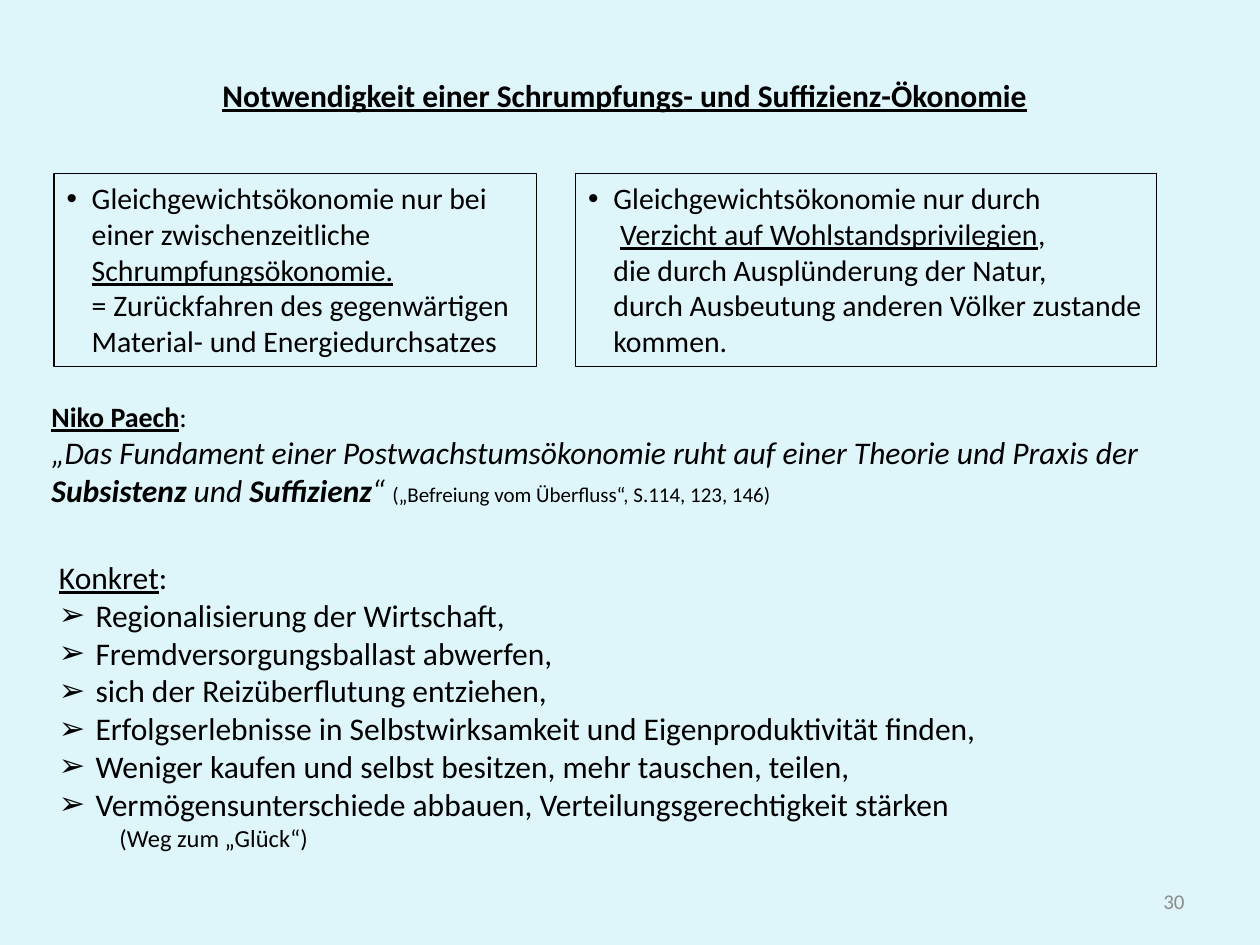
import pptx
import pptx.util
import pptx.dml.color
import pptx.enum.shapes
import pptx.enum.text
import pptx.oxml.ns
import lxml.etree

ALIGN = pptx.enum.text.PP_ALIGN
ANCHOR = pptx.enum.text.MSO_ANCHOR

SLIDE_W, SLIDE_H = 10, 7.5
BACKGROUND, INK, GREY = "DEF5FA", "000000", "8C8C8C"
FONT = "Calibri"

# Content: a paragraph is a list of (text, format) runs
TITLE = [[("Notwendigkeit einer Schrumpfungs- und Suffizienz-Ökonomie",
           {"bold": True, "underline": True})]]

SHRINKING = [[
    ("Gleichgewichtsökonomie nur bei einer zwischenzeitliche ", {}),
    ("Schrumpfungsökonomie.", {"underline": True}),
    ("\n= Zurückfahren des gegenwärtigen Material- und Energiedurchsatzes", {}),
]]

RENUNCIATION = [[
    ("Gleichgewichtsökonomie nur durch\n ", {}),
    ("Verzicht auf Wohlstandsprivilegien", {"underline": True}),
    (",\ndie durch Ausplünderung der Natur,\n"
     "durch Ausbeutung anderen Völker zustande kommen.", {}),
]]

QUOTE = [
    [("Niko Paech", {"size": 16, "bold": True, "underline": True}),
     (":", {"size": 16})],
    [("„Das Fundament einer Postwachstumsökonomie ruht auf einer Theorie "
      "und Praxis der ", {"italic": True}),
     ("Subsistenz ", {"italic": True, "bold": True}),
     ("und ", {"italic": True}),
     ("Suffizienz", {"italic": True, "bold": True}),
     ("“ ", {"italic": True}),
     ("(„Befreiung vom Überfluss“, S.114, 123, 146)", {"size": 12})],
]

CONCRETE_HEAD = [("Konkret", {"underline": True}), (":", {})]
CONCRETE_STEPS = [
    "Regionalisierung der Wirtschaft,",
    "Fremdversorgungsballast abwerfen,",
    "sich der Reizüberflutung entziehen,",
    "Erfolgserlebnisse in Selbstwirksamkeit und Eigenproduktivität finden,",
    "Weniger kaufen und selbst besitzen, mehr tauschen, teilen,",
    "Vermögensunterschiede abbauen, Verteilungsgerechtigkeit stärken",
]
CONCRETE_GOAL = [("(Weg zum „Glück“)", {"size": 14})]

PAGE_NUMBER = [[("30", {})]]


def rgb(hex_colour):
    return pptx.dml.color.RGBColor.from_string(hex_colour)


def set_indent(paragraph, left, bullet=None):
    """Indent a paragraph; a bullet hangs in the indent."""
    properties = paragraph._p.get_or_add_pPr()
    width = pptx.util.Inches(left)
    properties.set("marL", str(width))
    if bullet:
        properties.set("indent", str(-width))
        for tag, key, value in (("a:buFont", "typeface", "Arial"),
                                ("a:buChar", "char", bullet)):
            mark = lxml.etree.SubElement(properties, pptx.oxml.ns.qn(tag))
            mark.set(key, value)


def write(shape, paragraphs, size=18, colour=INK, align=ALIGN.LEFT,
          anchor=ANCHOR.TOP, indents=()):
    """Fill a shape; indents maps paragraph index to (left, bullet)."""
    frame = shape.text_frame
    frame.word_wrap = True
    frame.vertical_anchor = anchor
    indents = dict(indents)
    for index, runs in enumerate(paragraphs):
        paragraph = frame.add_paragraph() if index else frame.paragraphs[0]
        paragraph.alignment = align
        if index in indents:
            set_indent(paragraph, *indents[index])
        for text, style in runs:
            for line_index, line in enumerate(text.split("\n")):
                if line_index:
                    paragraph.add_line_break()
                if not line:
                    continue
                run = paragraph.add_run()
                run.text = line
                font = run.font
                font.name = FONT
                font.size = pptx.util.Pt(style.get("size", size))
                font.bold = style.get("bold", False)
                font.italic = style.get("italic", False)
                font.underline = style.get("underline", False)
                font.color.rgb = rgb(colour)


def main():
    deck = pptx.Presentation()
    deck.slide_width = pptx.util.Inches(SLIDE_W)
    deck.slide_height = pptx.util.Inches(SLIDE_H)
    slide = deck.slides.add_slide(deck.slide_layouts[6])
    slide.background.fill.solid()
    slide.background.fill.fore_color.rgb = rgb(BACKGROUND)

    def text_box(*place):
        return slide.shapes.add_textbox(*map(pptx.util.Inches, place))

    # Page number and title
    write(text_box(7.17, 6.95, 2.33, 0.4), PAGE_NUMBER, size=12, colour=GREY,
          align=ALIGN.RIGHT, anchor=ANCHOR.MIDDLE)
    write(text_box(0.82, 0.52, 8.28, 0.46), TITLE, align=ALIGN.CENTER,
          anchor=ANCHOR.MIDDLE)

    # Quotation
    write(text_box(0.31, 3.12, 9.29, 0.98), QUOTE)

    # Concrete steps, the goal indented below the last one
    concrete = [CONCRETE_HEAD, *([(step, {})] for step in CONCRETE_STEPS),
                CONCRETE_GOAL]
    indents = {row: (0.29, "➢") for row in range(1, len(CONCRETE_STEPS) + 1)}
    indents[len(concrete) - 1] = (0.48,)
    write(text_box(0.37, 4.38, 8.43, 2.49), concrete, indents=indents)

    # Two framed conditions side by side
    for left, width, condition in ((0.43, 3.83, SHRINKING),
                                   (4.57, 4.61, RENUNCIATION)):
        frame = slide.shapes.add_shape(
            pptx.enum.shapes.MSO_SHAPE.RECTANGLE,
            *map(pptx.util.Inches, (left, 1.38, width, 1.53)))
        frame.shadow.inherit = False
        frame.fill.background()
        frame.line.color.rgb = rgb(INK)
        frame.line.width = pptx.util.Pt(0.75)
        write(frame, condition, size=17, indents={0: (0.2, "•")})

    deck.save("out.pptx")


if __name__ == "__main__":
    main()
